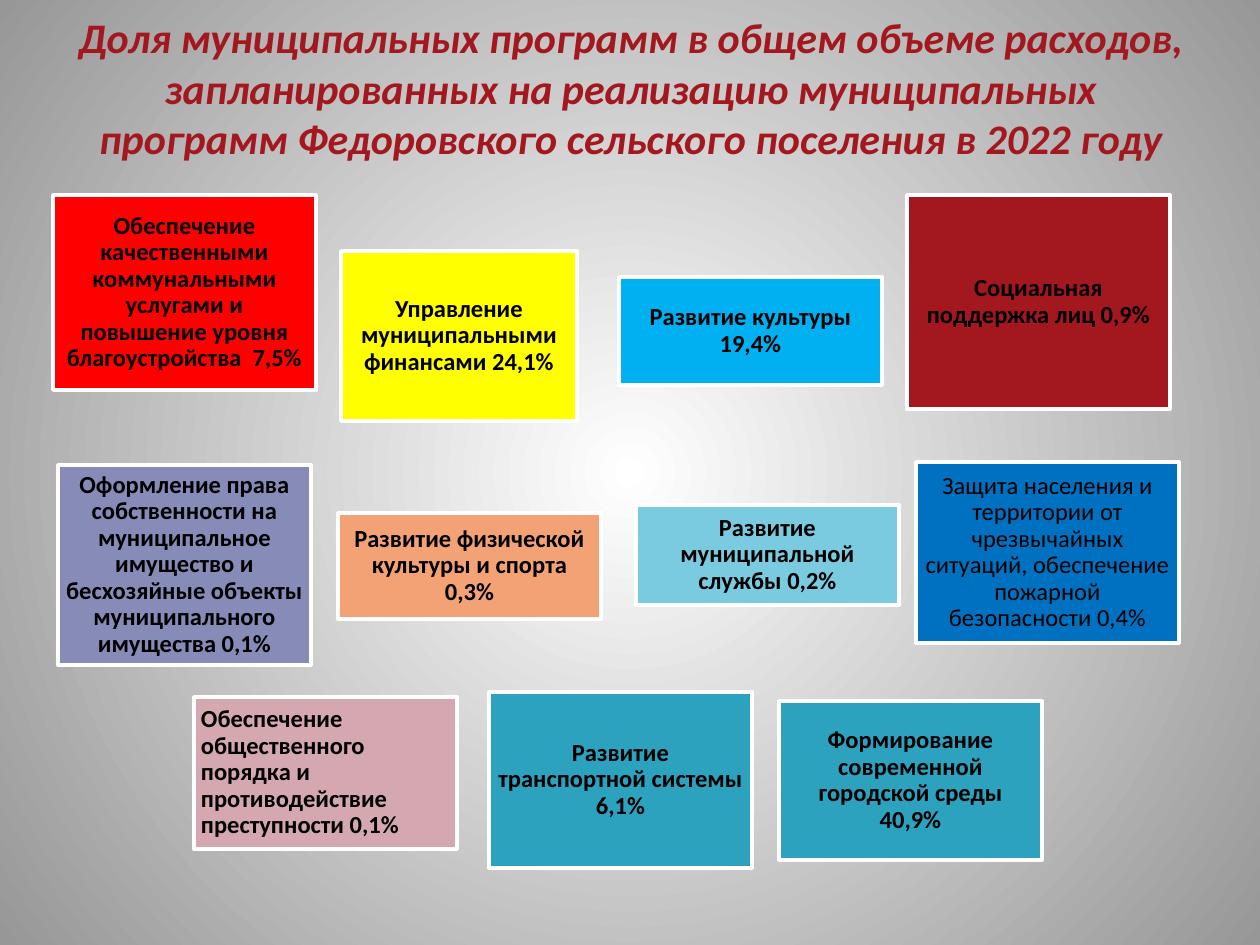
from dataclasses import dataclass

from lxml.etree import SubElement
from pptx import Presentation
from pptx.dml.color import RGBColor
from pptx.enum.shapes import MSO_SHAPE
from pptx.enum.text import MSO_ANCHOR, PP_ALIGN
from pptx.oxml.ns import qn
from pptx.slide import Slide
from pptx.text.text import TextFrame
from pptx.util import Emu, Pt

EMU_PER_PX = 914400 / 126
BOX_WIDTH = 263
BOX_INSET = 7
FONT = "Calibri"
TITLE = ("Доля муниципальных программ в общем объеме расходов, запланированных на "
         "реализацию муниципальных программ Федоровского сельского поселения в 2022 году")


@dataclass
class Program:
    text: str
    left: int
    top: int
    height: int
    fill: str
    width: int = BOX_WIDTH
    bold: bool = True
    align: PP_ALIGN = PP_ALIGN.CENTER


PROGRAMS = [
    # Top row
    Program("Обеспечение качественными коммунальными услугами и повышение уровня "
            "благоустройства  7,5%", 53, 195, 195, "FF0000"),
    Program("Управление муниципальными финансами 24,1%", 341, 251, 170, "FFFF00", width=236),
    Program("Развитие культуры 19,4%", 619, 277, 108, "00B0F0"),
    Program("Социальная поддержка лиц 0,9%", 907, 195, 214, "A3171E"),
    # Middle row
    Program("Оформление права собственности на муниципальное имущество и бесхозяйные "
            "объекты муниципального имущества 0,1%", 58, 465, 200, "878BB8", width=253),
    Program("Развитие физической культуры и спорта 0,3%", 338, 513, 106, "F3A276"),
    Program("Развитие муниципальной службы 0,2%", 636, 505, 100, "7ACBE0"),
    Program("Защита населения и территории от чрезвычайных ситуаций, обеспечение "
            "пожарной безопасности 0,4%", 916, 462, 181, "0070C0", bold=False),
    # Bottom row
    Program("Обеспечение общественного порядка и противодействие преступности 0,1%",
            194, 697, 152, "D5A7B1", align=PP_ALIGN.LEFT),
    Program("Развитие транспортной системы 6,1%", 489, 692, 176, "2DA2BF"),
    Program("Формирование современной городской среды 40,9%", 779, 701, 159, "2DA2BF"),
]


def px(length: int) -> Emu:
    return Emu(round(length * EMU_PER_PX))


def color(value: str) -> RGBColor:
    return RGBColor.from_string(value)


def set_text(frame: TextFrame, text: str, size: int, hex_color: str, bold: bool = True,
             italic: bool = False, align: PP_ALIGN = PP_ALIGN.CENTER) -> None:
    frame.text = text
    frame.word_wrap = True
    frame.vertical_anchor = MSO_ANCHOR.MIDDLE
    paragraph = frame.paragraphs[0]
    paragraph.alignment = align
    font = paragraph.runs[0].font
    font.name, font.size = FONT, Pt(size)
    font.bold, font.italic = bold, italic
    font.color.rgb = color(hex_color)


def paint_background(slide: Slide, center: str, edge: str) -> None:
    fill = slide.background.fill
    fill.gradient()
    for stop, position, value in zip(fill.gradient_stops, (0, 1), (center, edge)):
        stop.position = position
        stop.color.rgb = color(value)
    # Replace the linear direction with a circle around the slide centre
    gradient = slide.element.find(".//" + qn("a:gradFill"))
    linear = gradient.find(qn("a:lin"))
    circle = SubElement(gradient, qn("a:path"), {"path": "circle"})
    SubElement(circle, qn("a:fillToRect"), dict.fromkeys("ltrb", "50000"))
    gradient.replace(linear, circle)


def add_title(slide: Slide) -> None:
    title = slide.shapes.add_textbox(px(64), px(0), px(1134), px(175))
    set_text(title.text_frame, TITLE, 24, "A3171E", italic=True)


def add_program(slide: Slide, program: Program) -> None:
    shape = slide.shapes.add_shape(MSO_SHAPE.RECTANGLE, px(program.left), px(program.top),
                                   px(program.width), px(program.height))
    shape.shadow.inherit = False
    shape.fill.solid()
    shape.fill.fore_color.rgb = color(program.fill)
    shape.line.color.rgb = color("FFFFFF")
    shape.line.width = Pt(2)
    frame = shape.text_frame
    frame.margin_left = frame.margin_right = px(BOX_INSET)
    frame.margin_top = frame.margin_bottom = px(BOX_INSET)
    set_text(frame, program.text, 14, "000000", bold=program.bold, align=program.align)
    frame.paragraphs[0].line_spacing = 0.9


def main() -> None:
    presentation = Presentation()
    presentation.slide_width, presentation.slide_height = px(1260), px(945)
    slide = presentation.slides.add_slide(presentation.slide_layouts[6])
    paint_background(slide, "FFFFFF", "979797")
    add_title(slide)
    for program in PROGRAMS:
        add_program(slide, program)
    presentation.save("out.pptx")


if __name__ == "__main__":
    main()
